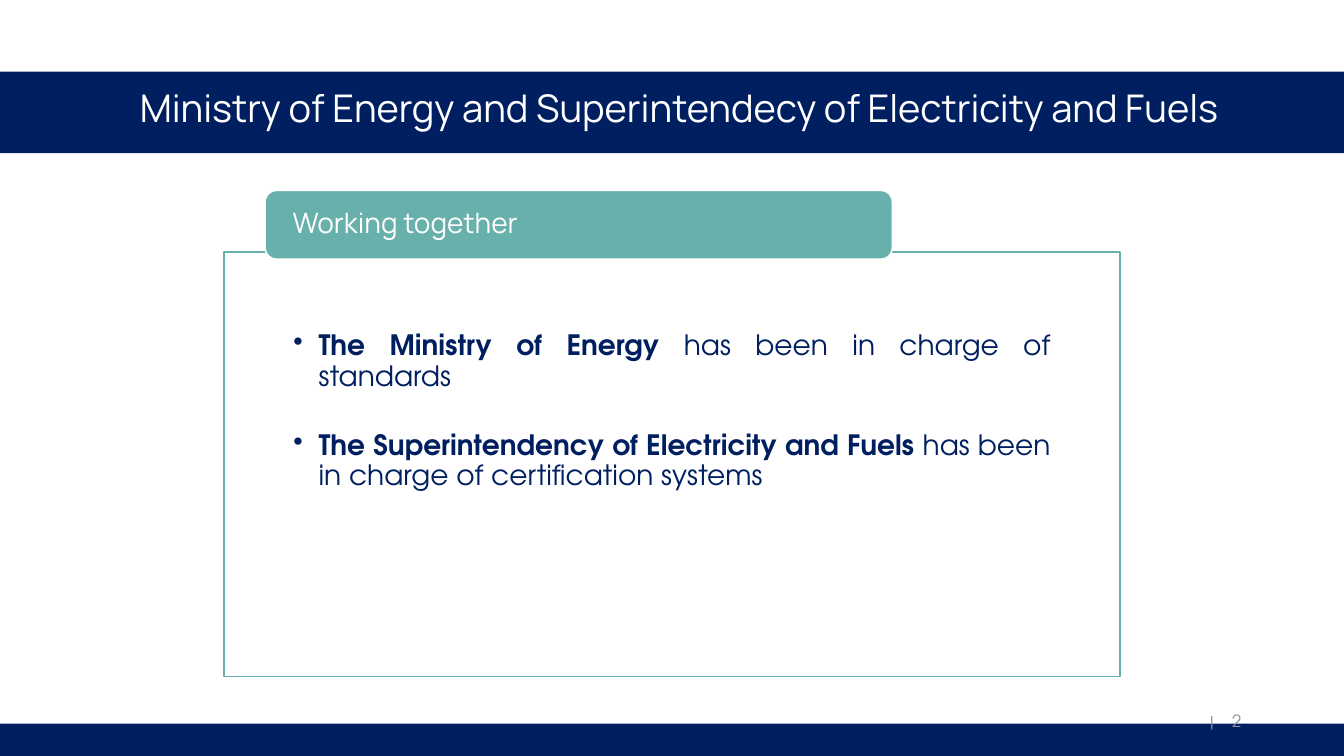
import pptx
import pptx.dml.color
import pptx.enum.shapes
import pptx.enum.text
import pptx.oxml
import pptx.oxml.ns
import pptx.util

Inches = pptx.util.Inches
Pt = pptx.util.Pt
Shapes = pptx.enum.shapes.MSO_SHAPE
Align = pptx.enum.text.PP_ALIGN
Anchor = pptx.enum.text.MSO_ANCHOR

NAVY, TEAL, WHITE, GREY = "001F60", "68B0AB", "FFFFFF", "8C8D9D"
HEADING_FONT, BODY_FONT = "Manrope", "TeX Gyre Adventor"


def colour(value):
    """Turn a hex string into a colour."""
    return pptx.dml.color.RGBColor.from_string(value)


def assign(target, values):
    """Set attributes of an object from a dict."""
    for name, value in values.items():
        setattr(target, name, value)


def add_panel(page, kind, place, fill, line=None):
    """Add a filled shape, outlined if a line colour is given."""
    panel = page.shapes.add_shape(kind, *map(Inches, place))
    panel.shadow.inherit = False
    panel.fill.solid()
    panel.fill.fore_color.rgb = colour(fill)
    if line:
        panel.line.color.rgb = colour(line)
        panel.line.width = Pt(1)
    else:
        panel.line.fill.background()
    return panel


def set_frame(box, anchor, insets=(0.1, 0.05, 0.1, 0.05)):
    """Set wrapping, anchor and insets, and return the text frame."""
    sides = ("margin_left", "margin_top", "margin_right", "margin_bottom")
    frame = box.text_frame
    assign(frame, {"word_wrap": True, "vertical_anchor": anchor})
    assign(frame, dict(zip(sides, map(Inches, insets))))
    return frame


def add_span(para, text, font, size, ink, bold=False):
    """Add a formatted run to a paragraph."""
    span = para.add_run()
    span.text = text
    assign(span.font, {"name": font, "size": Pt(size), "bold": bold})
    span.font.color.rgb = colour(ink)


def add_property(para, markup):
    """Append an XML element to the paragraph properties."""
    namespace = pptx.oxml.ns.nsdecls("a")
    element = pptx.oxml.parse_xml(markup.replace("/>", f" {namespace}/>", 1)
                                  if markup.count("<") == 1
                                  else markup.replace(">", f" {namespace}>", 1))
    para._p.get_or_add_pPr().append(element)


def add_title(page, text):
    """Add the title band and its centred text."""
    add_panel(page, Shapes.RECTANGLE, (0, 0.71, 13.33, 0.81), NAVY)
    box = page.shapes.add_textbox(*map(Inches, (0.61, 0.7, 12.26, 0.81)))
    para = set_frame(box, Anchor.MIDDLE).paragraphs[0]
    assign(para, {"alignment": Align.CENTER, "line_spacing": 0.8,
                  "space_after": Pt(6)})
    add_span(para, text, HEADING_FONT, 27.2, WHITE)


def add_page_number(page, number):
    """Add the page number after a bar, set apart by a tab stop."""
    box = page.shapes.add_textbox(*map(Inches, (9.42, 6.95, 3, 0.4)))
    para = set_frame(box, Anchor.MIDDLE, (2.58, 0.05, 0, 0.05)).paragraphs[0]
    assign(para, {"alignment": Align.LEFT, "space_after": Pt(6)})
    stop = Inches(0.22)
    add_property(para, f'<a:tabLst><a:tab pos="{stop}" algn="l"/></a:tabLst>')
    add_span(para, f"|\t{number}", BODY_FONT, 12, GREY)


def add_bullets(page, items):
    """Add the outlined panel with its bulleted statements."""
    panel = add_panel(page, Shapes.RECTANGLE, (2.22, 2.5, 8.89, 4.21), WHITE, TEAL)
    frame = set_frame(panel, Anchor.TOP, (0.69, 0.79, 0.69, 0.16))
    for index, (subject, duty) in enumerate(items):
        para = frame.add_paragraph() if index else frame.paragraphs[0]
        assign(para, {"alignment": Align.JUSTIFY, "line_spacing": 0.9})
        if index:
            para.space_before = Pt(28)
        properties = para._p.get_or_add_pPr()
        properties.set("marL", str(Inches(0.25)))
        properties.set("indent", str(Inches(-0.25)))
        add_property(para, '<a:buChar char="•"/>')
        add_span(para, subject, BODY_FONT, 20, NAVY, True)
        add_span(para, f" {duty}", BODY_FONT, 20, NAVY)


def add_tab(page, text):
    """Add the rounded heading over the panel's top edge."""
    tab = add_panel(page, Shapes.ROUNDED_RECTANGLE, (2.63, 1.89, 6.22, 0.68),
                    TEAL, WHITE)
    para = set_frame(tab, Anchor.MIDDLE, (0.24, 0, 0.24, 0)).paragraphs[0]
    assign(para, {"alignment": Align.LEFT, "line_spacing": 0.9,
                  "space_after": Pt(7)})
    add_span(para, text, HEADING_FONT, 20, WHITE)


def main():
    """Build and save the slide."""
    deck = pptx.Presentation()
    assign(deck, {"slide_width": Inches(13.33), "slide_height": Inches(7.5)})
    page = deck.slides.add_slide(deck.slide_layouts[6])
    add_panel(page, Shapes.RECTANGLE, (0, 7.18, 13.33, 0.32), NAVY)
    add_title(page, "Ministry of Energy and Superintendecy of Electricity and Fuels")
    add_page_number(page, 2)
    add_bullets(page, [
        ("The Ministry of Energy", "has been in charge of standards"),
        ("The Superintendency of Electricity and Fuels",
         "has been in charge of certification systems"),
    ])
    add_tab(page, "Working together")
    deck.save("out.pptx")


if __name__ == "__main__":
    main()
